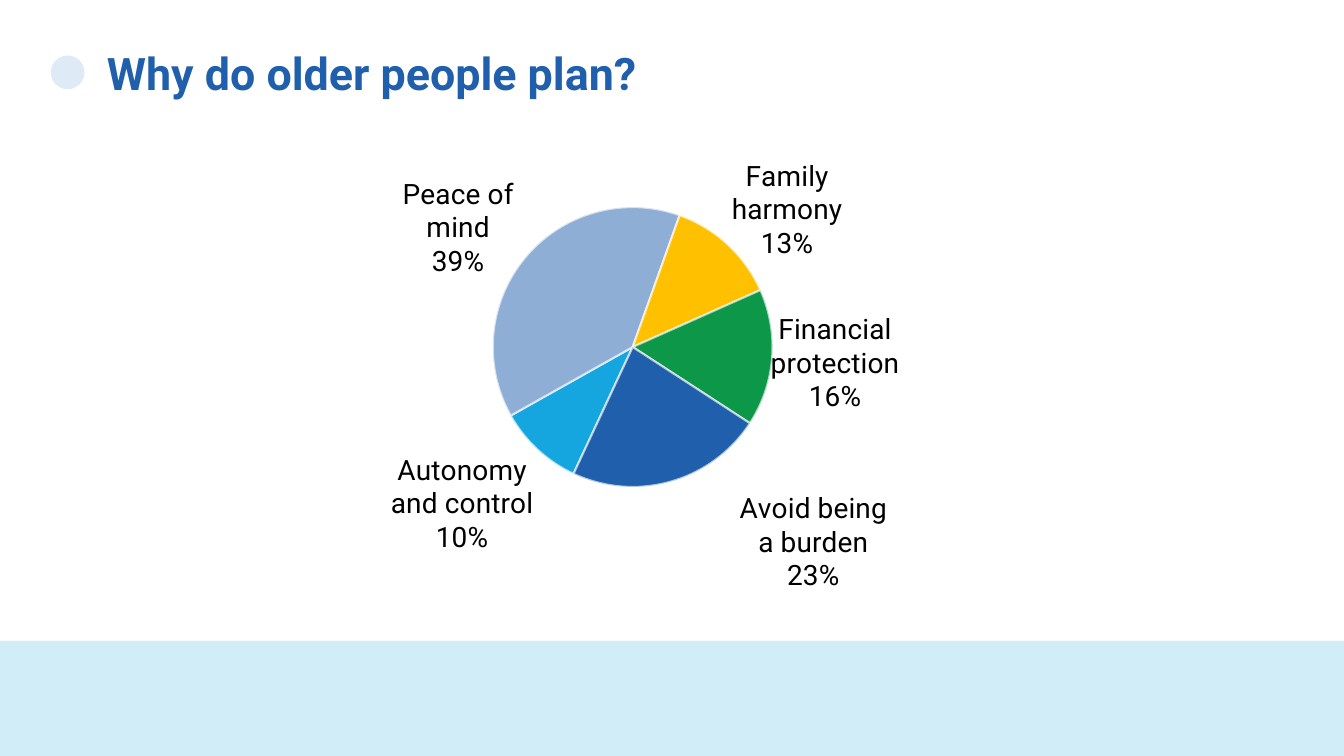
from copy import deepcopy
from lxml.etree import Element, SubElement
from pptx import Presentation
from pptx.chart.data import CategoryChartData
from pptx.dml.color import RGBColor
from pptx.enum.chart import XL_CHART_TYPE, XL_LABEL_POSITION
from pptx.enum.shapes import MSO_SHAPE
from pptx.enum.text import MSO_ANCHOR, PP_ALIGN
from pptx.oxml.ns import qn
from pptx.util import Cm, Pt

HUES = {"navy": "1F5FAC", "sky": "15A6DF", "gold": "FFC000", "green": "0D9748",
        "pale": "DEEBF7", "white": "FFFFFF", "black": "000000"}
FONT = "Roboto"
C15 = "http://schemas.microsoft.com/office/drawing/2012/chart"


def paint(fill, hue, alpha=100):
    fill.solid()
    fill.fore_color.rgb = RGBColor.from_string(HUES[hue])
    if alpha < 100:
        tone = fill._xPr.find(".//" + qn("a:srgbClr"))
        SubElement(tone, qn("a:alpha")).set("val", str(alpha * 1000))


def place(layout, **parts):
    manual = SubElement(layout, qn("c:manualLayout"))
    for key, val in parts.items():
        SubElement(manual, qn("c:" + key)).set("val", str(val))
    return layout


deck = Presentation()
deck.slide_width, deck.slide_height = Cm(33.87), Cm(19.05)
slide = deck.slides.add_slide(deck.slide_layouts[5])

# Bottom band and title dot
for kind, box, hue, alpha in [
    (MSO_SHAPE.RECTANGLE, (0, 16.15, 33.87, 2.9), "sky", 20),
    (MSO_SHAPE.OVAL, (1.28, 1.4, 0.85, 0.85), "pale", 100),
]:
    shape = slide.shapes.add_shape(kind, *[Cm(n) for n in box])
    shape.shadow.inherit = False
    paint(shape.fill, hue, alpha)
    shape.line.fill.background()

# Title
title = slide.shapes.title
title.left, title.top, title.width, title.height = Cm(2.44), Cm(1.17), Cm(31.37), Cm(2.97)
title.text_frame.vertical_anchor = MSO_ANCHOR.TOP
para = title.text_frame.paragraphs[0]
para.alignment, para.line_spacing = PP_ALIGN.LEFT, 0.9
run = para.add_run()
run.text = "Why do older people plan?"
run.font.bold = True

# Pie chart: name, value, hue, opacity, label shift
slices = [("Autonomy and control", 10, "sky", 100, None),
          ("Peace of mind", 39, "navy", 50, (-0.01, 0.05)),
          ("Family harmony", 13, "gold", 100, (0, 0.04)),
          ("Financial protection", 16, "green", 100, (-0.01, 0.01)),
          ("Avoid being a burden", 23, "navy", 100, (0.09, 0.01))]
data = CategoryChartData()
data.categories = [name for name, *_ in slices]
data.add_series("Series 1", [val for _, val, *_ in slices])
chart = slide.shapes.add_chart(XL_CHART_TYPE.PIE, Cm(6.88), Cm(3), Cm(18.69), Cm(13.06), data).chart
chart.has_legend = chart.has_title = False
plot = chart.plots[0]
plot.vary_by_categories = True
pie = plot.series[0]
for i, (_, _, hue, alpha, _) in enumerate(slices):
    form = pie.points[i].format
    paint(form.fill, hue, alpha)
    form.line.width = Pt(1.5)
    paint(form.line.fill, "white", 64)

# Slice labels
tags = pie.data_labels
tags.show_value = False
tags.show_category_name = tags.show_percentage = True
tags.number_format, tags.number_format_is_linked = "0%", False
tags.position = XL_LABEL_POSITION.OUTSIDE_END
for font, size, hue in [(run.font, 32, "navy"), (chart.font, 20, "black"), (tags.font, 20, "black")]:
    font.name, font.size = FONT, Pt(size)
    font.color.rgb = RGBColor.from_string(HUES[hue])
root = tags._element
lead = root.find(qn("c:showLeaderLines"))
if lead is not None:
    root.remove(lead)
SubElement(root, qn("c:separator")).text = "\n"
parts = list(root)

# Shifted labels; the last one is also narrower
moved = [(i, row[-1]) for i, row in enumerate(slices) if row[-1]]
for spot, (i, (x, y)) in enumerate(moved):
    tag = Element(qn("c:dLbl"))
    SubElement(tag, qn("c:idx")).set("val", str(i))
    place(SubElement(tag, qn("c:layout")), x=x, y=y)
    tag.extend([deepcopy(part) for part in parts])
    if i == len(slices) - 1:
        ext = SubElement(SubElement(tag, qn("c:extLst")), qn("c:ext"))
        ext.set("uri", "{CE6537A1-D6FC-4f65-9D91-7224C49458BB}")
        place(SubElement(ext, "{%s}layout" % C15, nsmap={"c15": C15}), w=0.16, h=0.26)
    root.insert(spot, tag)
SubElement(root, qn("c:showLeaderLines")).set("val", "0")

# Pie size and start angle
area = chart._chartSpace.find(".//" + qn("c:plotArea"))
old = area.find(qn("c:layout"))
if old is not None:
    area.remove(old)
area.insert(0, place(Element(qn("c:layout")), layoutTarget="inner", xMode="edge", yMode="edge",
                     x=0.29, y=0.17, w=0.39, h=0.54))
ring = area.find(qn("c:pieChart"))
turn = ring.find(qn("c:firstSliceAng"))
if turn is None:
    turn = SubElement(ring, qn("c:firstSliceAng"))
turn.set("val", "205")

deck.save("out.pptx")
